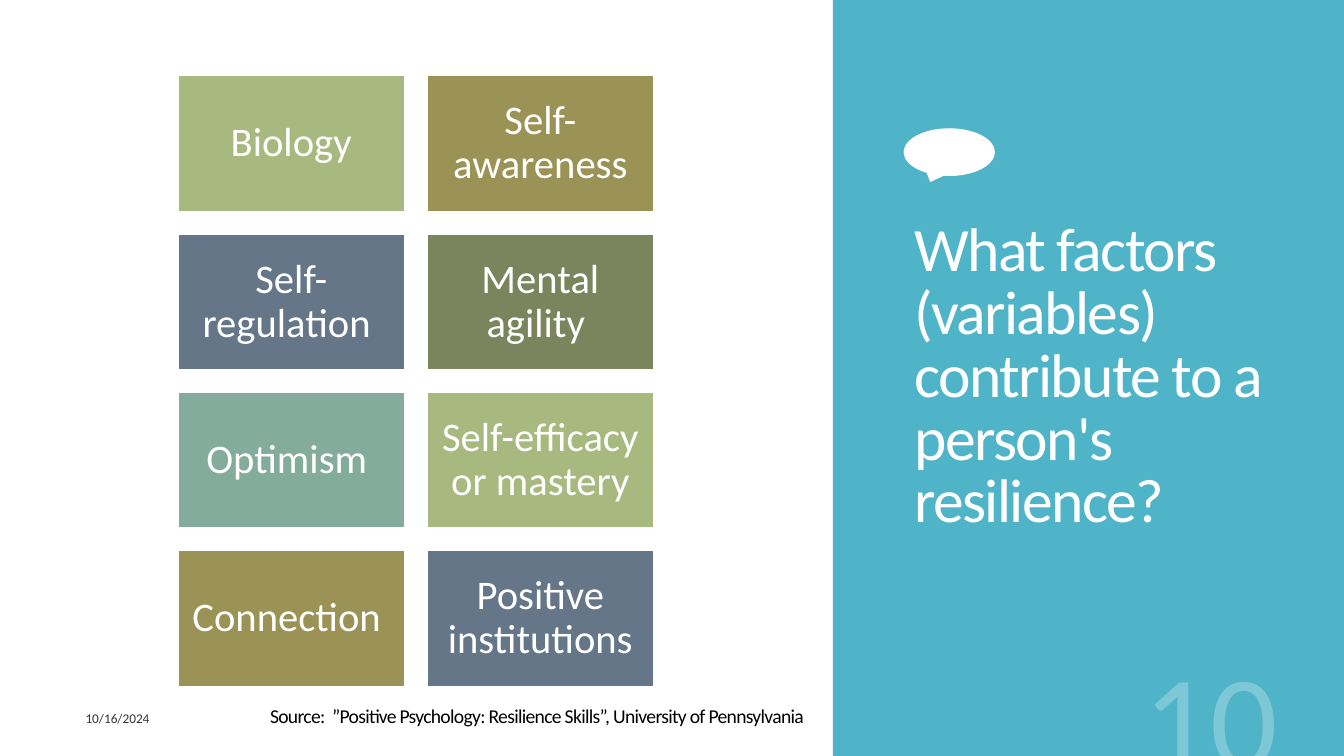
"""Build a slide listing the factors that contribute to resilience."""
from lxml.etree import SubElement
from pptx import Presentation
from pptx.dml.color import RGBColor
from pptx.enum.shapes import MSO_SHAPE as Shape
from pptx.enum.text import MSO_ANCHOR as Anchor, MSO_AUTO_SIZE as AutoSize, PP_ALIGN as Align
from pptx.oxml.ns import qn
from pptx.util import Pt

PX = 9144
WHITE = RGBColor(0xFF, 0xFF, 0xFF)
BLACK = RGBColor(0x00, 0x00, 0x00)
TEAL = RGBColor(0x50, 0xB4, 0xC8)
GREEN = RGBColor(0xA8, 0xB9, 0x7F)
OLIVE = RGBColor(0x9B, 0x92, 0x56)
SLATE = RGBColor(0x65, 0x76, 0x89)
MOSS = RGBColor(0x7A, 0x85, 0x5D)
SAGE = RGBColor(0x84, 0xAC, 0x9D)


def add_block(page, kind, left, top, width, height, fill, line=None):
    block = page.shapes.add_shape(kind, left * PX, top * PX, width * PX, height * PX)
    block.shadow.inherit = False
    block.fill.solid()
    block.fill.fore_color.rgb = fill
    if line is None:
        block.line.fill.background()
    else:
        block.line.color.rgb = line
        block.line.width = Pt(1)
    return block


def write(box, text, size, color, anchor, align, line_spacing, tracking=0, opacity=100):
    frame = box.text_frame
    frame.word_wrap = True
    frame.auto_size = AutoSize.NONE
    frame.vertical_anchor = anchor
    para = frame.paragraphs[0]
    para.alignment = align
    para.line_spacing = line_spacing
    span = para.add_run()
    span.text = text
    span.font.name = "Calibri"
    span.font.size = Pt(size)
    span.font.color.rgb = color
    properties = span.font._element
    if tracking:
        properties.set("spc", str(tracking))
    if opacity < 100:
        solid = properties.find(qn("a:solidFill"))
        SubElement(solid[0], qn("a:alpha")).set("val", str(opacity * 1000))


deck = Presentation()
deck.slide_width = 1333 * PX
deck.slide_height = 750 * PX
page = deck.slides.add_slide(deck.slide_layouts[5])

title = page.shapes.title
title.left, title.top, title.width, title.height = 897 * PX, 70 * PX, 366 * PX, 611 * PX
write(title, "What factors (variables) contribute to a person's resilience?",
      44, WHITE, Anchor.MIDDLE, Align.LEFT, 0.85, tracking=-120)

panel = add_block(page, Shape.RECTANGLE, 826, 0, 507, 750, TEAL)
bubble = add_block(page, Shape.OVAL_CALLOUT, 897, 128, 89, 46, WHITE, WHITE)
for backdrop in (panel, bubble):
    title.element.addprevious(backdrop.element)

factors = [
    ("Biology", GREEN),
    ("Self-awareness", OLIVE),
    ("Self-regulation ", SLATE),
    ("Mental agility ", MOSS),
    ("Optimism ", SAGE),
    ("Self-efficacy or mastery", GREEN),
    ("Connection ", OLIVE),
    ("Positive institutions", SLATE),
]
for index, (name, color) in enumerate(factors):
    row, column = divmod(index, 2)
    tile = add_block(page, Shape.RECTANGLE, 177 + 247 * column, 75 + 157 * row,
                     224, 135, color, WHITE)
    frame = tile.text_frame
    frame.margin_left = frame.margin_right = frame.margin_top = frame.margin_bottom = 12 * PX
    write(tile, name, 29, WHITE, Anchor.MIDDLE, Align.CENTER, 0.9)

captions = [
    ((258, 692, 674, 34),
     ("Source:  ”Positive Psychology: Resilience Skills”, University of Pennsylvania",
      14, BLACK, Anchor.TOP, Align.LEFT, 1.07, -50)),
    ((75, 701, 450, 25),
     ("10/16/2024", 9.5, BLACK, Anchor.MIDDLE, Align.LEFT, 0.9, 0, 80)),
    ((958, 643, 320, 153),
     ("10", 95, WHITE, Anchor.BOTTOM, Align.RIGHT, 0.9, 0, 25)),
]
for place, wording in captions:
    box = page.shapes.add_textbox(*(length * PX for length in place))
    write(box, *wording)

deck.save("out.pptx")
